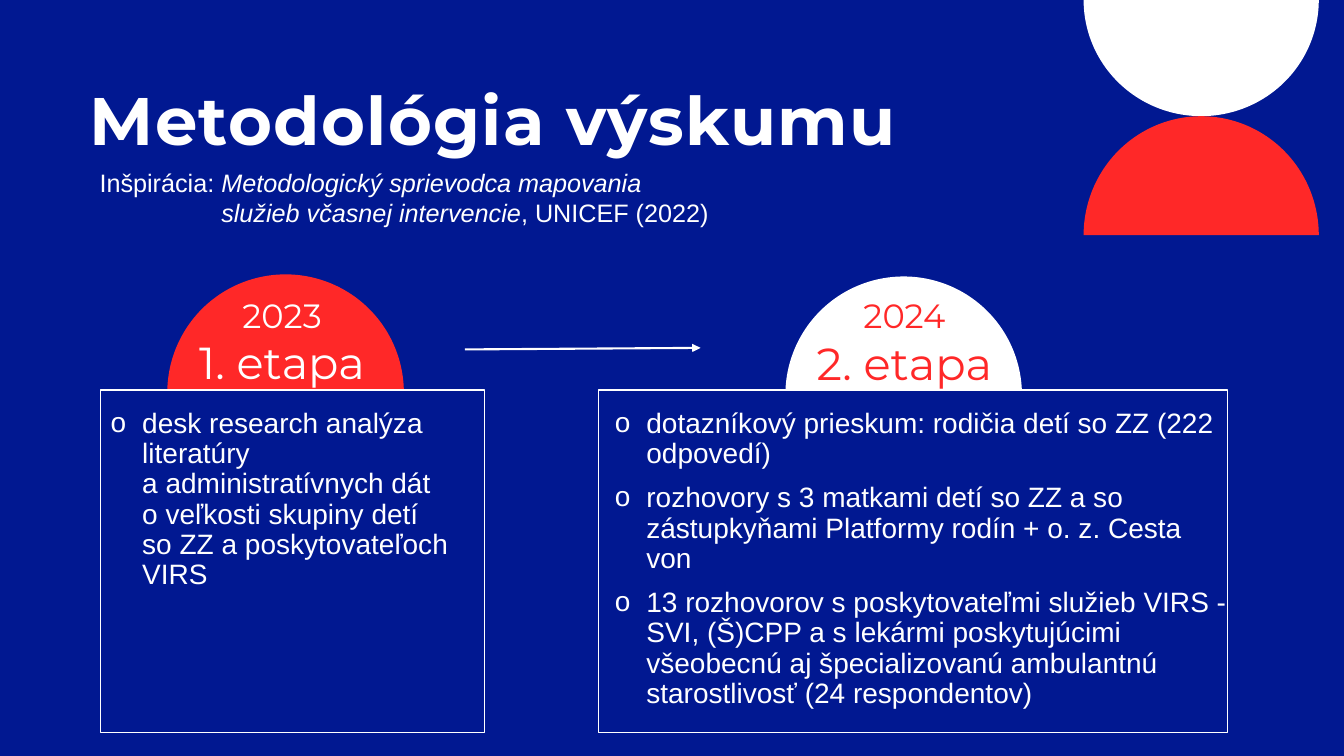
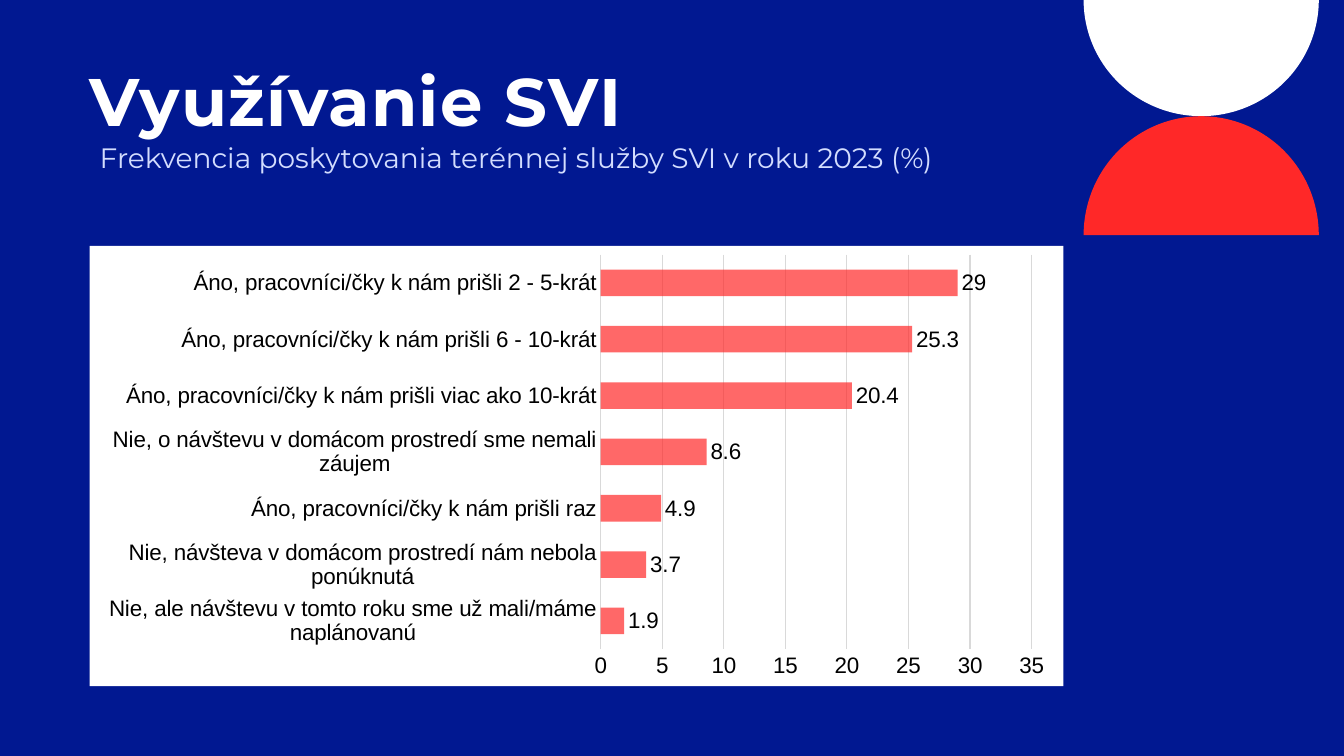
"""Build two slides on the research method and the use of the SVI service."""
from dataclasses import dataclass

from pptx import Presentation
from pptx.chart.data import CategoryChartData
from pptx.dml.color import RGBColor
from pptx.enum.chart import XL_CHART_TYPE, XL_LABEL_POSITION, XL_TICK_MARK
from pptx.enum.shapes import MSO_CONNECTOR, MSO_SHAPE
from pptx.enum.text import MSO_ANCHOR, PP_ALIGN
from pptx.oxml import parse_xml
from pptx.oxml.ns import nsdecls, qn
from pptx.util import Pt


@dataclass(frozen=True)
class Theme:
    """Colours, fonts and type sizes."""
    navy: str = "011891"
    white: str = "FFFFFF"
    red: str = "FF2828"
    pale: str = "D3DDFE"
    grey: str = "D9D9D9"
    black: str = "000000"
    head: str = "Montserrat"
    body: str = "Arial"
    title: int = 48
    stage: int = 32
    year: int = 24
    text: int = 20
    note: int = 18
    chart: int = 16


T = Theme()
LEFT = 64
HANG = 22.5
BASE = 278.6
HARD = chr(160)

STAGES = [
    dict(year="2023", name="1. etapa", fill=T.red, ink=T.white,
         disc=(119.5, 196), cover=78.5, label=(122.5, 206.8),
         box=(72, 274.3), pad=(7.2, 5),
         items=["desk research analýza literatúry a~administratívnych dát "
                "o~veľkosti skupiny detí so~ZZ a~poskytovateľoch VIRS"]),
    dict(year="2024", name="2. etapa", fill=T.white, ink=T.red,
         disc=(561, 197.5), cover=502.5, label=(567, 207.2),
         box=(427.7, 449.3), pad=(11.5, 0),
         items=["dotazníkový prieskum: rodičia detí so~ZZ (222 odpovedí)",
                "rozhovory s~3 matkami detí so ZZ a so zástupkyňami "
                "Platformy rodín + o. z. Cesta von",
                "13 rozhovorov s~poskytovateľmi služieb VIRS - SVI, (Š)CPP "
                "a~s~lekármi poskytujúcimi všeobecnú aj špecializovanú "
                "ambulantnú starostlivosť (24 respondentov)"]),
]

VISITS = [
    ("Nie, ale návštevu v tomto roku sme už mali/máme naplánovanú", 1.9),
    ("Nie, návšteva v domácom prostredí nám nebola ponúknutá", 3.7),
    ("Áno, pracovníci/čky k nám prišli raz", 4.9),
    ("Nie, o návštevu v domácom prostredí sme nemali záujem", 8.6),
    ("Áno, pracovníci/čky k nám prišli viac ako 10-krát", 20.4),
    ("Áno, pracovníci/čky k nám prišli 6 - 10-krát", 25.3),
    ("Áno, pracovníci/čky k nám prišli 2 - 5-krát", 29),
]


def tint(fill, color):
    """Fill with one solid colour."""
    fill.solid()
    fill.fore_color.rgb = RGBColor.from_string(color)


def style(font, size, color, face=T.body, bold=None):
    """Set the face, size and colour of a font."""
    font.name, font.size, font.bold = face, Pt(size), bold
    font.color.rgb = RGBColor.from_string(color)


def pen(line, color, width):
    """Set the colour and width of a line."""
    line.color.rgb = RGBColor.from_string(color)
    line.width = Pt(width)


def plain(form, color):
    """Give a shape a flat fill with no line or shadow."""
    form.shadow.inherit = False
    tint(form.fill, color)
    form.line.fill.background()


def add(slide, kind, x, y, w, h):
    """Add a preset shape."""
    return slide.shapes.add_shape(kind, Pt(x), Pt(y), Pt(w), Pt(h))


def frame(slide, x, y, w, h):
    """Add a wrapping text box and return its text frame."""
    text = slide.shapes.add_textbox(Pt(x), Pt(y), Pt(w), Pt(h)).text_frame
    text.word_wrap = True
    return text


def pad(text, left, top, right, low):
    """Set the four margins of a text frame."""
    text.margin_left, text.margin_top = Pt(left), Pt(top)
    text.margin_right, text.margin_bottom = Pt(right), Pt(low)


def inset(para, left):
    """Give a paragraph a hanging indent."""
    props = para._p.get_or_add_pPr()
    props.set("marL", str(Pt(left)))
    props.set("indent", str(-Pt(left)))
    return props


def half(slide, y, tip, color):
    """Draw a half disc with its flat side at y and its top at tip."""
    wide, tall = 84, abs(tip - y)
    form = slide.shapes.build_freeform(774, y, scale=Pt(1))
    form.add_line_segments([(774 + wide, tip), (774 + 2 * wide, y)], close=True)
    disc = form.convert_to_shape()
    first, last = disc._element.findall(".//" + qn("a:lnTo"))
    turn = 10800000 if tip < y else -10800000
    first.addprevious(parse_xml(
        f'<a:arcTo {nsdecls("a")} wR="{wide}" hR="{tall}" '
        f'stAng="10800000" swAng="{turn}"/>'))
    for step in (first, last):
        step.getparent().remove(step)
    plain(disc, color)


def page(deck, title, top):
    """Add a slide with the shared ground, discs and title."""
    slide = deck.slides.add_slide(deck.slide_layouts[6])
    tint(slide.background.fill, T.navy)
    half(slide, 0, 83, T.white)
    half(slide, 168, 83, T.red)
    text = frame(slide, LEFT, top, 660, 55)
    pad(text, 0, 0, 0, 0)
    para = text.paragraphs[0]
    para.line_spacing = 0.9
    run = para.add_run()
    run.text = title
    run._r.get_or_add_rPr().set("spc", "100")
    style(para.font, T.title, T.white, T.head, True)
    return slide


def source(slide):
    """Add the note that names the source of the method."""
    para = frame(slide, LEFT, 116, 480, 51).paragraphs[0]
    inset(para, 87)
    para.add_run().text = "Inšpirácia: "
    first = para.add_run()
    first.text = "Metodologický sprievodca mapovania"
    para.add_line_break()
    second = para.add_run()
    second.text = "služieb včasnej intervencie"
    para.add_run().text = ", UNICEF (2022)"
    first.font.italic = second.font.italic = True
    style(para.font, T.note, T.white)


def bullets(text, items):
    """Write a list with round bullets, where ~ is a hard space."""
    for k, item in enumerate(items):
        para = text.add_paragraph() if k else text.paragraphs[0]
        para.text = item.replace("~", HARD)
        para.alignment = PP_ALIGN.LEFT
        para.line_spacing = 0.9
        if k:
            para.space_before = Pt(10)
        props = inset(para, HANG)
        props.append(parse_xml(f'<a:buFont {nsdecls("a")} typeface="{T.body}"/>'))
        props.append(parse_xml(f'<a:buChar {nsdecls("a")} char="o"/>'))
        style(para.font, T.text, T.white)


def stage(slide, part):
    """Draw one stage: half-covered disc, framed list and label."""
    plain(add(slide, MSO_SHAPE.OVAL, *part["disc"], 169, 169), part["fill"])
    plain(add(slide, MSO_SHAPE.RECTANGLE, part["cover"], 279.4, 246, 92), T.navy)
    left, width = part["box"]
    box = add(slide, MSO_SHAPE.RECTANGLE, left, BASE, width, 244.8)
    box.shadow.inherit = False
    box.fill.background()
    pen(box.line, T.white, 1)
    text = box.text_frame
    text.word_wrap = True
    text.vertical_anchor = MSO_ANCHOR.TOP
    pad(text, part["pad"][0], 13.7, part["pad"][1], 0)
    bullets(text, part["items"])
    label = frame(slide, *part["label"], 158, 75)
    label.text = part["year"]
    label.add_paragraph().text = part["name"]
    for para, size in zip(label.paragraphs, (T.year, T.stage)):
        para.alignment = PP_ALIGN.CENTER
        style(para.font, size, part["ink"], T.head)


def arrow(slide, x, y, right, low):
    """Draw an arrow between two points."""
    link = slide.shapes.add_connector(
        MSO_CONNECTOR.STRAIGHT, Pt(x), Pt(y), Pt(right), Pt(low))
    pen(link.line, T.white, 1.5)
    props = link._element.spPr
    props.find(qn("a:ln")).append(parse_xml(f'<a:tailEnd {nsdecls("a")} type="triangle"/>'))
    props.append(parse_xml(f'<a:effectLst {nsdecls("a")}/>'))


def bars(slide, rows):
    """Add the bar chart of visits."""
    data = CategoryChartData()
    data.categories = [name for name, _ in rows]
    data.add_series("Series 1", [val for _, val in rows])
    chart = slide.shapes.add_chart(
        XL_CHART_TYPE.BAR_CLUSTERED, Pt(LEFT), Pt(175.7), Pt(695.6), Pt(314.4), data).chart
    chart.has_legend = chart.has_title = False
    style(chart.font, T.chart, T.black)
    chart._chartSpace.chart.addnext(parse_xml(
        f'<c:spPr {nsdecls("c", "a")}><a:solidFill><a:srgbClr val="{T.white}"/>'
        '</a:solidFill><a:ln><a:noFill/></a:ln></c:spPr>'))
    plot = chart.plots[0]
    plot.gap_width = 112
    plot.vary_by_categories = False
    plot.has_data_labels = True
    labels = plot.data_labels
    labels.show_value = True
    labels.position = XL_LABEL_POSITION.OUTSIDE_END
    style(labels.font, T.chart, T.black)
    row = plot.series[0]
    tint(row.format.fill, T.red)
    row._element.find(".//" + qn("a:srgbClr")).append(
        parse_xml(f'<a:alpha {nsdecls("a")} val="70000"/>'))
    for axis in (chart.category_axis, chart.value_axis):
        axis.major_tick_mark = axis.minor_tick_mark = XL_TICK_MARK.NONE
        style(axis.tick_labels.font, T.chart, T.black)
    pen(chart.category_axis.format.line, T.grey, 0.75)
    scale = chart.value_axis
    scale.minimum_scale, scale.maximum_scale, scale.major_unit = 0, 35, 5
    scale.has_major_gridlines = True
    pen(scale.major_gridlines.format.line, T.grey, 0.75)
    scale.format.line.fill.background()


def method(deck):
    """Build the slide on the research method."""
    slide = page(deck, "Metodológia výskumu", 62.5)
    source(slide)
    for part in STAGES:
        stage(slide, part)
    arrow(slide, 332, 249.6, 500.4, 248.5)


def usage(deck):
    """Build the slide on the use of the service."""
    slide = page(deck, "Využívanie SVI", 49)
    bars(slide, VISITS)
    para = frame(slide, LEFT, 96.5, 691, 32).paragraphs[0]
    para.text = "Frekvencia poskytovania terénnej služby SVI v roku 2023 (%)"
    style(para.font, T.text, T.pale, T.head)


def main():
    """Build and save the deck."""
    deck = Presentation()
    deck.slide_width, deck.slide_height = Pt(960), Pt(540)
    method(deck)
    usage(deck)
    deck.save("out.pptx")


if __name__ == "__main__":
    main()
